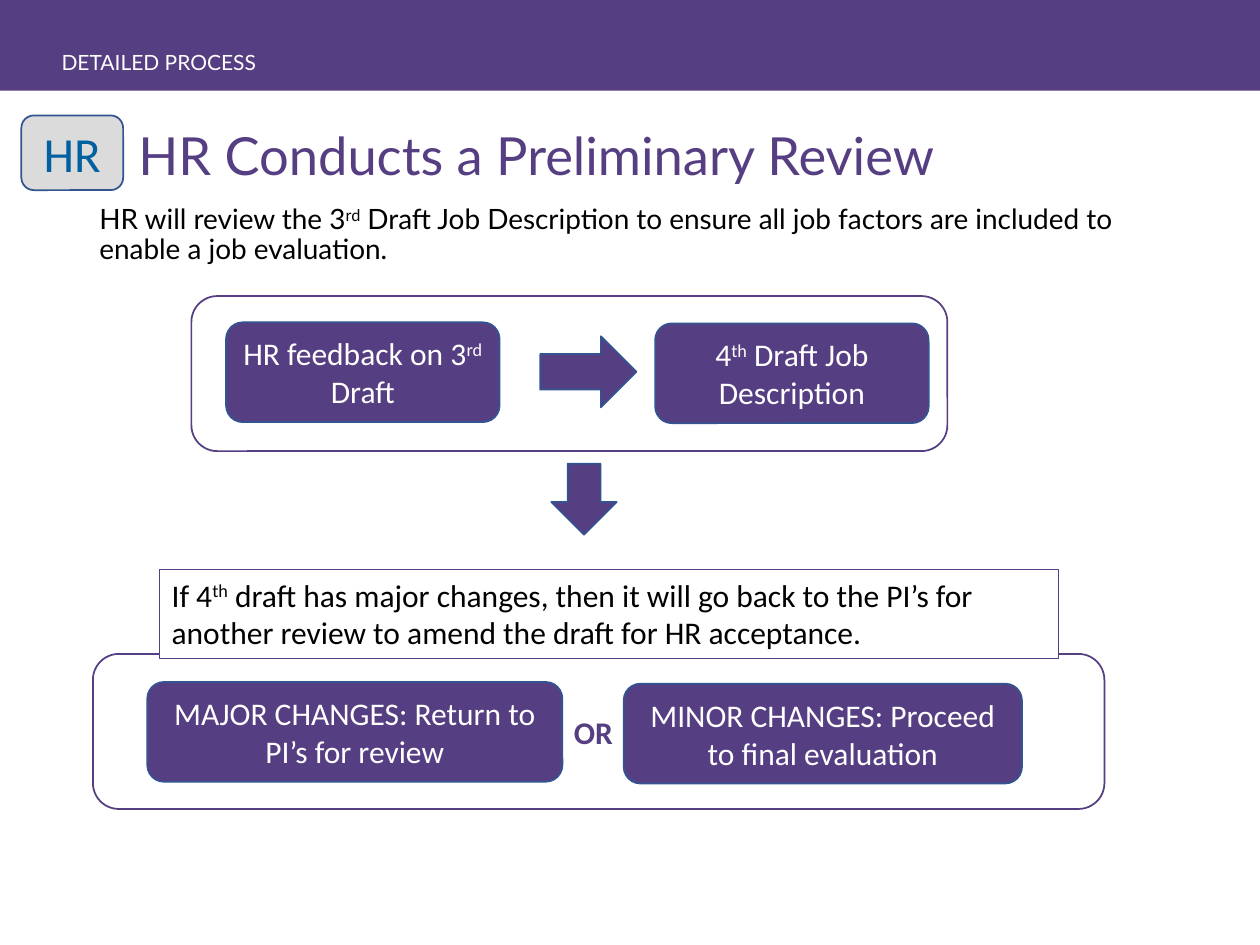
from pptx import Presentation
from pptx import util as u
from pptx.dml.color import RGBColor
from pptx.enum import shapes, text

PURPLE, BLUE_EDGE, WHITE, BLACK = "563E82", "325491", "FFFFFF", "000000"
SHAPE = shapes.MSO_SHAPE
ALIGN = text.PP_ALIGN
ANCHOR = text.MSO_ANCHOR


def rgb(value):
    return RGBColor.from_string(value)


class ProcessSlide:
    head_font, body_font = "Lato", "Calibri"

    def __init__(self, deck):
        self.slide = deck.slides.add_slide(deck.slide_layouts[6])

    def add_words(self, shape, words, size, color, font=None, align=ALIGN.LEFT,
                  anchor=ANCHOR.TOP, spacing=None, bold=None):
        """Fill a shape with one paragraph; parts between ^ marks are superscript."""
        frame = shape.text_frame
        frame.word_wrap = True
        frame.vertical_anchor = anchor
        paragraph = frame.paragraphs[0]
        paragraph.alignment = align
        if spacing:
            paragraph.line_spacing = spacing
        for index, part in enumerate(words.split("^")):
            run = paragraph.add_run()
            run.text = part
            run.font.name = font or self.body_font
            run.font.size = u.Pt(size)
            run.font.bold = bold
            run.font.color.rgb = rgb(color)
            if index % 2:
                run._r.get_or_add_rPr().set("baseline", "30000")

    def shape(self, kind, box, fill=None, line=None, width=1):
        item = self.slide.shapes.add_shape(kind, *map(u.Pt, box))
        item.shadow.inherit = False
        if fill:
            item.fill.solid()
            item.fill.fore_color.rgb = rgb(fill)
        else:
            item.fill.background()
        if line:
            item.line.color.rgb = rgb(line)
            item.line.width = u.Pt(width)
        else:
            item.line.fill.background()
        return item

    def label(self, box, words, size, color, inset=7.2, **style):
        item = self.slide.shapes.add_textbox(*map(u.Pt, box))
        item.text_frame.margin_left = u.Pt(inset)
        self.add_words(item, words, size, color, **style)

    def heading(self, box, words, size, color, **style):
        self.label(box, words, size, color, font=self.head_font, spacing=0.9, **style)

    def step(self, box, words, size=18, color=WHITE, fill=PURPLE):
        item = self.shape(SHAPE.ROUNDED_RECTANGLE, box, fill, BLUE_EDGE)
        self.add_words(item, words, size, color, align=ALIGN.CENTER, anchor=ANCHOR.MIDDLE)

    def group_frame(self, box):
        self.shape(SHAPE.ROUNDED_RECTANGLE, box, line=PURPLE)

    def arrow(self, box, rotation=0):
        self.shape(SHAPE.RIGHT_ARROW, box, PURPLE, BLUE_EDGE).rotation = rotation

    def note(self, box, words):
        item = self.shape(SHAPE.RECTANGLE, box, WHITE, PURPLE, 0.75)
        self.add_words(item, words, 18, BLACK)


def main():
    deck = Presentation()
    deck.slide_width, deck.slide_height = u.Pt(720), u.Pt(540)
    page = ProcessSlide(deck)

    page.shape(SHAPE.RECTANGLE, (-0.7, -1.4, 721.4, 53.3), PURPLE)
    page.heading((50, 60.5, 620.6, 60.5), "HR Conducts a Preliminary Review", 30, PURPLE,
                 inset=29, anchor=ANCHOR.MIDDLE)
    page.step((12.2, 66, 58.2, 42.7), "HR", 28, "0060A0", "DBDBDB")
    page.heading((49.7, 113.8, 620.6, 45.4),
                 "HR will review the 3^rd^ Draft Job Description to ensure all job "
                 "factors are included to enable a job evaluation.", 16, BLACK)

    page.arrow((313.4, 266.6, 40.6, 37.4), 90)
    page.step((129.2, 184.2, 156.3, 57), "HR feedback on 3^rd^ Draft")
    page.step((374.4, 184.8, 156.3, 57), "4^th^ Draft Job Description")
    page.group_frame((109.4, 169.2, 432, 88.6))
    page.heading((28.1, 26.6, 149, 23), "DETAILED PROCESS", 12, WHITE)
    page.arrow((308.7, 192.2, 55, 40.6))

    page.group_frame((53.1, 373.7, 578, 88.6))
    page.note((91, 325.4, 514, 50.9),
              "If 4^th^ draft has major changes, then it will go back to the PI’s for "
              "another review to amend the draft for HR acceptance.")
    page.step((84.2, 389.7, 237.2, 57), "MAJOR CHANGES: Return to PI’s for review")
    page.step((356.4, 390.7, 227.6, 57), "MINOR CHANGES: Proceed to final evaluation")
    page.label((320.4, 404, 37.4, 29), "OR", 18, PURPLE, align=ALIGN.CENTER, bold=True)

    deck.save("out.pptx")


if __name__ == "__main__":
    main()
